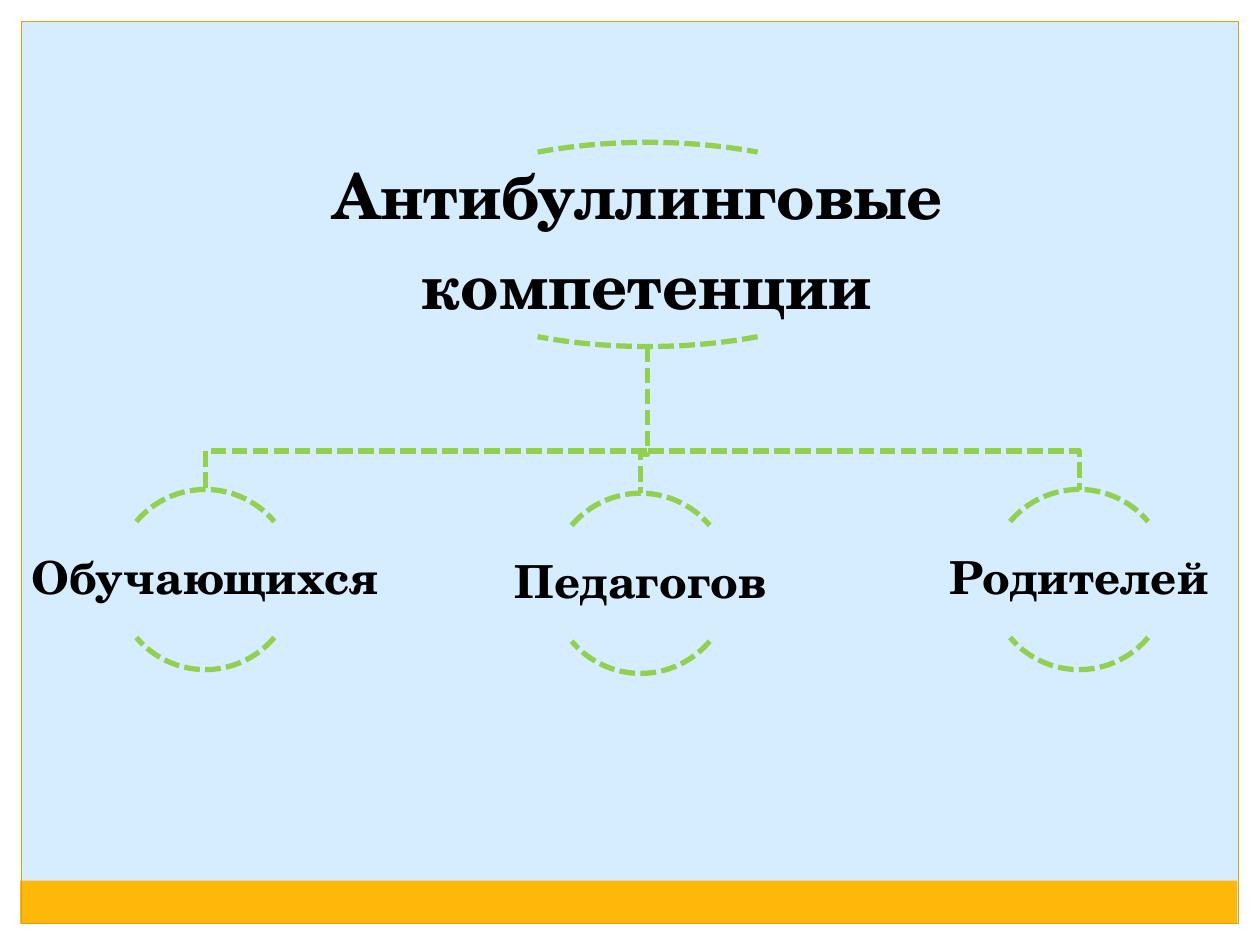
from pptx import Presentation
from pptx import util as u
from pptx.dml.color import RGBColor
from pptx.enum import dml, shapes, text

COLORS = {"sky": "D6ECFF", "white": "FFFFFF", "amber": "FEB80A",
          "frame": "E0A209", "green": "92D050", "black": "000000"}
FONT = "TeX Gyre Schola"
COLS, ROWS = 100, 75
EDGE = 1.7
CELL = u.Inches(10) // COLS
ARCS = [(132, 192), (24, 84)]
ROOT_X, ROOT_Y, ROOT_W, ROOT_H = 51.4, 11.3, 40.8, 16.2
RING, DROP = 14.3, 3.05
BRANCHES = [("Обучающихся", 16.3, 38.85), ("Педагогов", 50.85, 39.15),
            ("Родителей", 85.65, 38.85)]


def rgb(name):
    return RGBColor.from_string(COLORS[name])


def grid(*cells):
    return [round(c * CELL) for c in cells]


def style(sp, fill=None, line=None, width=3, dashed=False):
    sp.shadow.inherit = False
    if fill:
        sp.fill.solid()
        sp.fill.fore_color.rgb = rgb(fill)
    else:
        sp.fill.background()
    if line:
        sp.line.color.rgb = rgb(line)
        sp.line.width = u.Pt(width)
        if dashed:
            sp.line.dash_style = dml.MSO_LINE.SQUARE_DOT
    else:
        sp.line.fill.background()


def add_rect(s, box, **fmt):
    sp = s.shapes.add_shape(shapes.MSO_SHAPE.RECTANGLE, *grid(*box))
    style(sp, **fmt)


def add_arcs(s, box):
    for angles in ARCS:
        sp = s.shapes.add_shape(shapes.MSO_SHAPE.ARC, *grid(*box))
        sp.adjustments[0], sp.adjustments[1] = angles
        style(sp, line="green", dashed=True)


def add_branch_line(s, x, y):
    start = (ROOT_X, ROOT_Y + ROOT_H)
    points = [(ROOT_X, y - DROP), (x, y - DROP), (x, y)]
    fb = s.shapes.build_freeform(*grid(*start))
    fb.add_line_segments([grid(*pt) for pt in points], close=False)
    style(fb.convert_to_shape(), line="green", dashed=True)


def set_text(sp, lines, size, inset, color="black", bold=True):
    tf = sp.text_frame
    tf.word_wrap = True
    tf.auto_size = text.MSO_AUTO_SIZE.NONE
    tf.vertical_anchor = text.MSO_ANCHOR.MIDDLE
    tf.margin_left = tf.margin_right = u.Inches(inset)
    tf.margin_top = tf.margin_bottom = u.Inches(inset)
    for i, line in enumerate(lines):
        p = tf.add_paragraph() if i else tf.paragraphs[0]
        p.alignment = text.PP_ALIGN.CENTER
        p.line_spacing = 0.9
        p.space_before = u.Pt(0)
        p.space_after = u.Pt(size * 0.35)
        r = p.add_run()
        r.text = line
        r.font.name = FONT
        r.font.size = u.Pt(size)
        r.font.bold = bold
        r.font.color.rgb = rgb(color)


def add_frame(s):
    for box in [(0, ROWS - EDGE, COLS, EDGE), (0, 0, COLS, EDGE),
                (COLS - EDGE, 0, EDGE, ROWS), (0, 0, EDGE, ROWS)]:
        add_rect(s, box, fill="white")
    add_rect(s, (1.6, 69.9, 96.6, 3.4), fill="amber")
    add_rect(s, (EDGE, EDGE, COLS - 2 * EDGE, ROWS - 2 * EDGE),
             line="frame", width=0.75)


def add_root(s):
    add_arcs(s, (ROOT_X - ROOT_W / 2, ROOT_Y, ROOT_W, ROOT_H))
    title = s.shapes.title
    title.left, title.top, title.width, title.height = grid(10.5, 14.2, 81.7, 10.4)
    set_text(title, ["Антибуллинговые ", "компетенции"], 36, 0.03)


def add_branch(s, label, x, y):
    add_arcs(s, (x - RING / 2, y, RING, RING))
    sp = s.shapes.add_textbox(*grid(x - 14.35, y + 2.55, 28.7, 9.2))
    set_text(sp, [label], 26, 0.02)


def main():
    prs = Presentation()
    prs.slide_width, prs.slide_height = grid(COLS, ROWS)
    s = prs.slides.add_slide(prs.slide_layouts[5])
    s.background.fill.solid()
    s.background.fill.fore_color.rgb = rgb("sky")
    add_frame(s)
    for label, x, y in reversed(BRANCHES):
        add_branch_line(s, x, y)
    add_root(s)
    for branch in BRANCHES:
        add_branch(s, *branch)
    prs.save("out.pptx")


if __name__ == "__main__":
    main()
